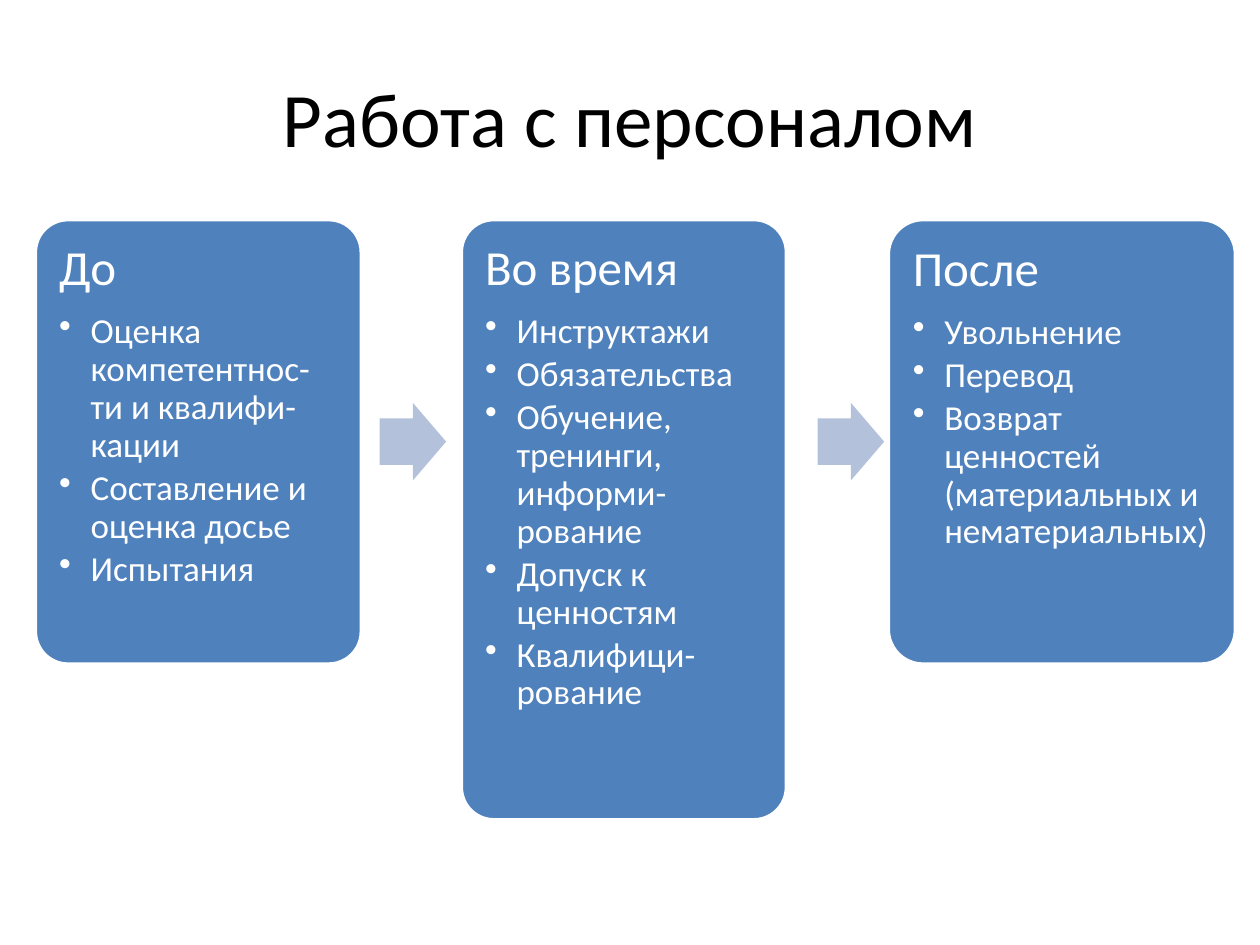
from lxml.etree import SubElement
from pptx import Presentation
from pptx.dml.color import RGBColor
from pptx.enum.shapes import MSO_SHAPE
from pptx.enum.text import MSO_ANCHOR, PP_ALIGN
from pptx.oxml.ns import qn
from pptx.util import Pt

COLORS = {"card": "4F81BD", "arrow": "B3C1DB", "light": "FFFFFF", "title": "000000"}
CARD_TOP = 125.5
ARROW_TOP = 230.2
CARDS = [
    (20.2, 186.3, 254, "До", [
        "Оценка компетентнос-ти и квалифи-кации",
        "Составление и оценка досье",
        "Испытания",
    ]),
    (263.6, 185.8, 343, "Во время", [
        "Инструктажи",
        "Обязательства",
        "Обучение, тренинги, информи-рование",
        "Допуск к ценностям",
        "Квалифици-рование",
    ]),
    (507.6, 198.4, 254, "После", [
        "Увольнение",
        "Перевод",
        "Возврат ценностей (материальных и нематериальных)",
    ]),
]
ARROW_LEFTS = [216.9, 467.2]


class StageSlide:
    """Draws the title, stage cards and arrows in one shared style."""

    def __init__(self, page, font="Calibri"):
        self.page = page
        self.font = font

    def style_font(self, para, size, color):
        para.font.name = self.font
        para.font.size = Pt(size)
        para.font.color.rgb = RGBColor.from_string(COLORS[color])

    def shape(self, kind, left, top, width, height, color):
        box = self.page.shapes.add_shape(kind, Pt(left), Pt(top), Pt(width), Pt(height))
        box.shadow.inherit = False
        box.fill.solid()
        box.fill.fore_color.rgb = RGBColor.from_string(COLORS[color])
        box.line.fill.background()
        return box

    def title(self, text):
        box = self.page.shapes.title
        box.left, box.top, box.width, box.height = Pt(36), Pt(21.6), Pt(648), Pt(90)
        box.text_frame.text = text
        box.text_frame.vertical_anchor = MSO_ANCHOR.MIDDLE
        para = box.text_frame.paragraphs[0]
        para.alignment = PP_ALIGN.CENTER
        self.style_font(para, 44, "title")

    def bullet(self, para):
        properties = para._p.get_or_add_pPr()
        properties.set("marL", str(Pt(18)))
        properties.set("indent", str(-Pt(18)))
        SubElement(properties, qn("a:buChar")).set("char", "•")

    def card(self, left, width, height, heading, items):
        box = self.shape(MSO_SHAPE.ROUNDED_RECTANGLE, left, CARD_TOP, width, height, "card")
        box.adjustments[0] = 0.1
        box.line.color.rgb = RGBColor.from_string(COLORS["light"])
        box.line.width = Pt(2)
        frame = box.text_frame
        frame.word_wrap = True
        frame.vertical_anchor = MSO_ANCHOR.TOP
        frame.margin_left = frame.margin_right = Pt(8.2)
        frame.margin_top = frame.margin_bottom = Pt(8.2)
        frame.text = "\n".join([heading, *items])
        for index, para in enumerate(frame.paragraphs):
            size, gap = (20, 3) if index else (28, 9.8)
            para.alignment = PP_ALIGN.LEFT
            para.line_spacing = 0.9
            para.space_after = Pt(gap)
            if index:
                para.level = 1
                self.bullet(para)
            self.style_font(para, size, "light")

    def arrow(self, left):
        box = self.shape(MSO_SHAPE.RIGHT_ARROW, left, ARROW_TOP, 38, 44.4, "arrow")
        box.adjustments[0] = 0.6
        box.adjustments[1] = 0.5


def main():
    deck = Presentation()
    deck.slide_width, deck.slide_height = Pt(720), Pt(540)
    slide = StageSlide(deck.slides.add_slide(deck.slide_layouts[5]))
    slide.title("Работа с персоналом")
    for card in CARDS:
        slide.card(*card)
    for left in ARROW_LEFTS:
        slide.arrow(left)
    deck.save("out.pptx")


if __name__ == "__main__":
    main()
